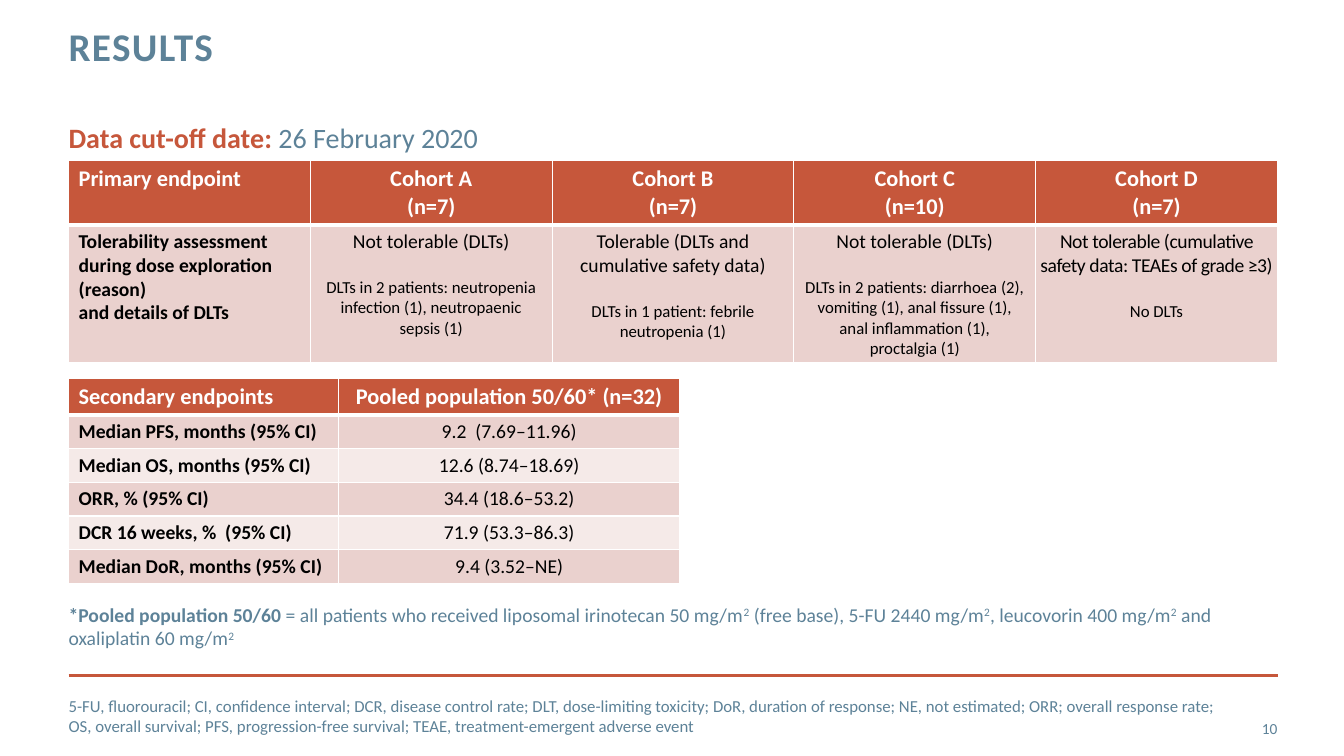
"""Build the Results slide with the primary and secondary endpoint tables."""
from lxml import etree
from pptx import Presentation
from pptx.dml.color import RGBColor
from pptx.enum.shapes import MSO_CONNECTOR
from pptx.enum.text import MSO_ANCHOR, MSO_AUTO_SIZE, PP_ALIGN
from pptx.oxml.ns import qn
from pptx.util import Pt

STRAIGHT = MSO_CONNECTOR.STRAIGHT
TOP, MIDDLE = MSO_ANCHOR.TOP, MSO_ANCHOR.MIDDLE
NO_AUTOFIT = MSO_AUTO_SIZE.NONE
LEFT, CENTER, RIGHT = PP_ALIGN.LEFT, PP_ALIGN.CENTER, PP_ALIGN.RIGHT

BRICK = RGBColor(0xC6, 0x57, 0x3B)
SLATE = RGBColor(0x5D, 0x82, 0x98)
BAND_DARK = RGBColor(0xEA, 0xD1, 0xCE)
BAND_LIGHT = RGBColor(0xF5, 0xEA, 0xE8)
BLACK = RGBColor(0, 0, 0)
WHITE = RGBColor(0xFF, 0xFF, 0xFF)
FONT = "Calibri"
MARGIN = 49
CONTENT_WIDTH = 863.5


def write_runs(frame, runs, size, align=LEFT):
    """Write (text, colour, bold, superscript) runs into the first paragraph."""
    frame.word_wrap = True
    frame.margin_left = 0
    paragraph = frame.paragraphs[0]
    paragraph.alignment = align
    for text, color, bold, superscript in runs:
        run = paragraph.add_run()
        run.text = text
        run.font.name, run.font.size, run.font.bold = FONT, Pt(size), bold
        run.font.color.rgb = color
        if superscript:
            run.font._element.set("baseline", "30000")


def style_cell(cell, text, size, color, bold, align, fill, bottom_width):
    """Set the text, white borders and fill of one table cell."""
    cell.text_frame.text = text
    for paragraph in cell.text_frame.paragraphs:
        paragraph.alignment = align
        for run in paragraph.runs:
            run.font.name, run.font.size, run.font.bold = FONT, Pt(size), bold
            run.font.color.rgb = color
    properties = cell._tc.get_or_add_tcPr()
    for side, width in (("lnL", 1), ("lnR", 1), ("lnT", 1), ("lnB", bottom_width)):
        border = etree.SubElement(properties, qn(f"a:{side}"), w=str(Pt(width)))
        solid = etree.SubElement(border, qn("a:solidFill"))
        etree.SubElement(solid, qn("a:srgbClr"), val=str(WHITE))
    cell.fill.solid()
    cell.fill.fore_color.rgb = fill


prs = Presentation()
prs.slide_width, prs.slide_height = Pt(960), Pt(540)
slide = prs.slides.add_slide(prs.slide_layouts[1])

footer_rule = slide.shapes.add_connector(
    STRAIGHT, Pt(MARGIN), Pt(482.4), Pt(913), Pt(482.4))
footer_rule.line.color.rgb = BRICK
footer_rule.line.width = Pt(2)
etree.SubElement(footer_rule._element.spPr, qn("a:effectLst"))

title, abbreviations = slide.shapes.title, slide.placeholders[1]
page_number = slide.shapes.add_textbox(Pt(850.5), Pt(506), Pt(62), Pt(29))
for part, anchor in ((title, TOP), (abbreviations, MIDDLE), (page_number, MIDDLE)):
    frame = part.text_frame
    frame.auto_size = NO_AUTOFIT
    frame.vertical_anchor = anchor
    frame.margin_top = frame.margin_right = frame.margin_bottom = 0

title.left, title.top, title.width, title.height = Pt(MARGIN), Pt(19.5), Pt(688), Pt(63)
write_runs(title.text_frame, [("RESULTS", SLATE, True, False)], 28)
title_line = title.text_frame.paragraphs[0]
title_line.line_spacing = Pt(30)
title_line.runs[0].font._element.set("spc", "100")

abbreviations.left, abbreviations.top = Pt(MARGIN), Pt(497)
abbreviations.width, abbreviations.height = Pt(834), Pt(29)
abbreviations_line = abbreviations.text_frame.paragraphs[0]
abbreviations_format = abbreviations_line._p.get_or_add_pPr()
abbreviations_format.set("marL", "0")
abbreviations_format.set("indent", "0")
etree.SubElement(abbreviations_format, qn("a:buNone"))
abbreviations_line.space_before = Pt(0)
write_runs(abbreviations.text_frame, [(
    "5-FU, fluorouracil; CI, confidence interval; DCR, disease control rate; "
    "DLT, dose-limiting toxicity; DoR, duration of response; NE, not estimated; "
    "ORR; overall response rate; OS, overall survival; PFS, progression-free "
    "survival; TEAE, treatment-emergent adverse event", SLATE, False, False)], 12)
write_runs(page_number.text_frame, [("10", SLATE, False, False)], 11, RIGHT)

cutoff_date = slide.shapes.add_textbox(Pt(MARGIN), Pt(82.8), Pt(360), Pt(31.5))
write_runs(cutoff_date.text_frame, [
    ("Data cut-off date:", BRICK, True, False),
    (" 26 February 2020", SLATE, False, False)], 20)

primary_rows = [
    ["Primary endpoint", "Cohort A\v(n=7)", "Cohort B\n(n=7)",
     "Cohort C\n(n=10)", "Cohort D\n(n=7)"],
    ["Tolerability assessment during dose exploration (reason)\nand details of DLTs",
     "Not tolerable (DLTs)\n"
     "DLTs in 2 patients: neutropenia infection (1), neutropaenic sepsis (1)",
     "Tolerable (DLTs and cumulative safety data)\n"
     "DLTs in 1 patient: febrile neutropenia (1)",
     "Not tolerable (DLTs)\n"
     "DLTs in 2 patients: diarrhoea (2), vomiting (1), anal fissure (1), "
     "anal inflammation (1), proctalgia (1)",
     "Not tolerable (cumulative safety data: TEAEs of grade ≥3)\nNo DLTs"],
]
secondary_rows = [
    ["Secondary endpoints", "Pooled population 50/60* (n=32)"],
    ["Median PFS, months (95% CI)", "9.2  (7.69–11.96)"],
    ["Median OS, months (95% CI)", "12.6 (8.74–18.69)"],
    ["ORR, % (95% CI)", "34.4 (18.6–53.2)"],
    ["DCR 16 weeks, %  (95% CI)", "71.9 (53.3–86.3)"],
    ["Median DoR, months (95% CI)", "9.4 (3.52–NE)"],
]
endpoint_tables = []
for rows, top, widths, heights in (
        (primary_rows, 114.5, [CONTENT_WIDTH / 5] * 5, [46, 98]),
        (secondary_rows, 270, [193, 243.5], [26] + [24] * 5)):
    table = slide.shapes.add_table(
        len(rows), len(widths), Pt(MARGIN), Pt(top),
        Pt(sum(widths)), Pt(sum(heights))).table
    for column, width in zip(table.columns, widths):
        column.width = Pt(width)
    for r, (texts, height) in enumerate(zip(rows, heights)):
        table.rows[r].height = Pt(height)
        header = r == 0
        fill = BRICK if header else BAND_DARK if r % 2 else BAND_LIGHT
        for c, text in enumerate(texts):
            style_cell(table.cell(r, c), text, 16 if header else 14,
                       WHITE if header else BLACK, header or c == 0,
                       CENTER if c else LEFT, fill, 3 if header else 1)
    endpoint_tables.append(table)

primary_table = endpoint_tables[0]
for c in range(1, 5):
    dlt_details = primary_table.cell(1, c).text_frame.paragraphs[1]
    dlt_details.space_before = Pt(17)
    dlt_details.runs[0].font.size = Pt(12)
cohort_d = primary_table.cell(1, 4)
cohort_d.margin_left = cohort_d.margin_right = Pt(3)
cohort_d.text_frame.paragraphs[0].runs[0].font._element.set("spc", "-30")

pooled_note = slide.shapes.add_textbox(
    Pt(MARGIN), Pt(427), Pt(CONTENT_WIDTH), Pt(41))
note_runs = [("*Pooled population 50/60 ", SLATE, True, False)]
for dose in ("= all patients who received liposomal irinotecan 50 mg/m",
             " (free base), 5-FU 2440 mg/m", ", leucovorin 400 mg/m",
             " and oxaliplatin 60 mg/m"):
    note_runs += [(dose, SLATE, False, False), ("2", SLATE, False, True)]
write_runs(pooled_note.text_frame, note_runs, 14)

prs.save("out.pptx")
